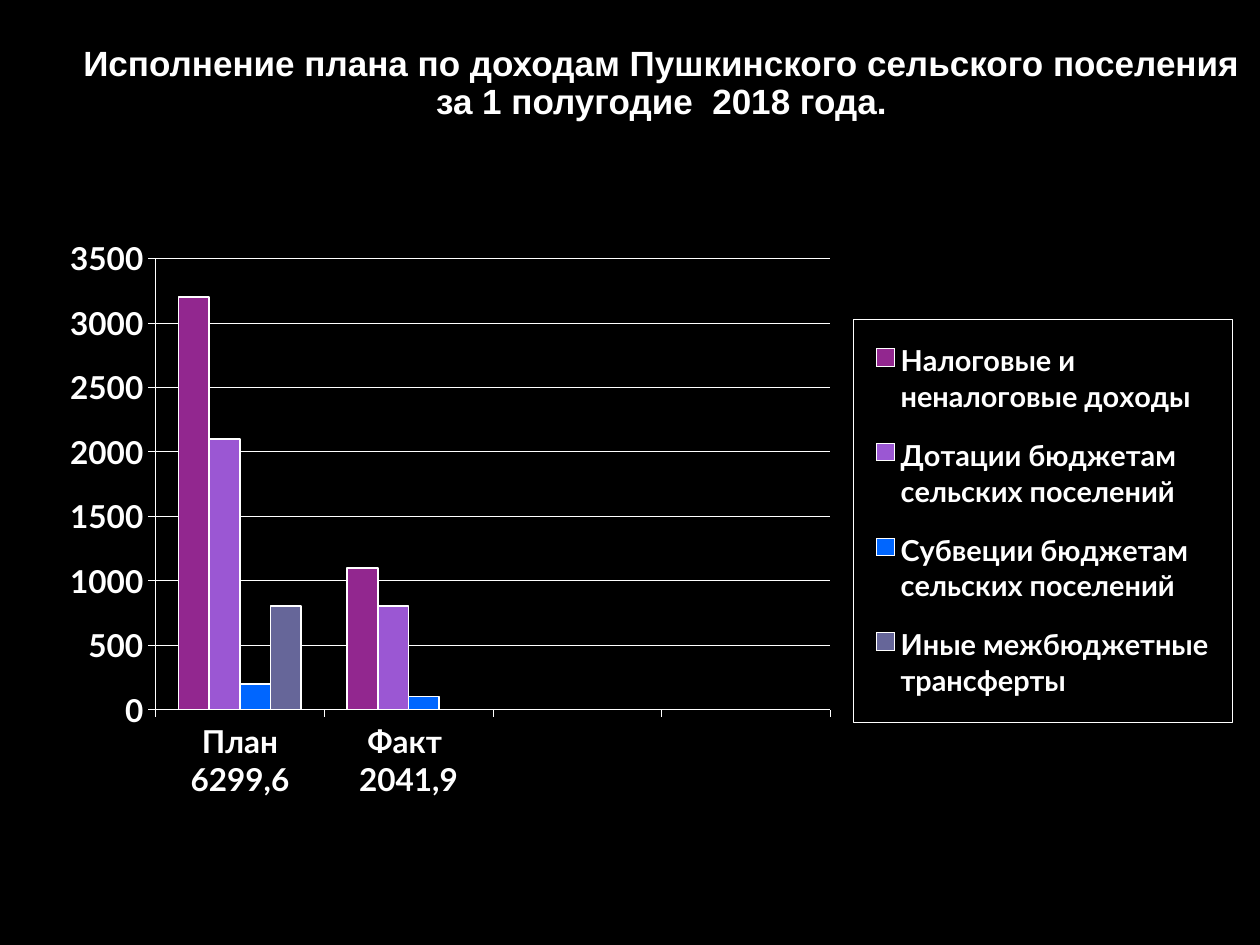
"""Build a slide that charts planned and actual income of a rural settlement."""
from lxml import etree
from pptx import Presentation, util as u
from pptx.chart.data import CategoryChartData
from pptx.dml.color import RGBColor
from pptx.enum import chart as ch, text as tx
from pptx.oxml import parse_xml
from pptx.oxml.ns import nsdecls, qn

WHITE = RGBColor(255, 255, 255)
BLACK = RGBColor(0, 0, 0)
PLUM = RGBColor(0x92, 0x27, 0x8F)
VIOLET = RGBColor(0x9B, 0x57, 0xD3)
BLUE = RGBColor(0x00, 0x66, 0xFF)
SLATE = RGBColor(0x66, 0x66, 0x99)

TITLE = "Исполнение плана по доходам Пушкинского сельского поселения за 1 полугодие  2018 года."
CATS = ["План 6299,6", "Факт  2041,9", "", ""]
ROWS = [
    ("Налоговые и неналоговые доходы", (3200, 1100, 0, 0), PLUM),
    ("Дотации бюджетам  сельских поселений", (2100, 800, None, None), VIOLET),
    ("Субвеции бюджетам сельских поселений", (200, 100, None, None), BLUE),
    ("Иные межбюджетные трансферты", (800, 0, None, None), SLATE),
]
TITLE_BOX = (0.5, 0.21, 9.5, 0.92)
CHART_BOX = (0.39, 1.76, 9.39, 4.84)
PLOT = (0.09, 0.06, 0.57, 0.74)
KEY = (0.68, 0.16, 0.32, 0.66)


def style(font, size, name="Lato"):
    font.size, font.name, font.bold = u.Pt(size), name, True
    font.color.rgb = WHITE


def write(slide, words, box, size=20, name="Arial"):
    frame = slide.shapes.add_textbox(*map(u.Inches, box)).text_frame
    frame.word_wrap = True
    frame.vertical_anchor = tx.MSO_ANCHOR.MIDDLE
    para = frame.paragraphs[0]
    para.alignment, para.line_spacing = tx.PP_ALIGN.CENTER, 0.9
    run = para.add_run()
    run.text = words
    style(run.font, size, name)


def rule(line, width=0.25):
    line.color.rgb, line.width = WHITE, u.Pt(width)


def layout(box, inner=False):
    node = etree.Element(qn("c:layout"))
    hand = etree.SubElement(node, qn("c:manualLayout"))
    pairs = [("layoutTarget", "inner")] if inner else []
    pairs += [("xMode", "edge"), ("yMode", "edge"), *zip("xywh", map(str, box))]
    for tag, val in pairs:
        etree.SubElement(hand, qn("c:" + tag)).set("val", val)
    return node


def place_plot(chart):
    area = chart.element.find(".//" + qn("c:plotArea"))
    for old in area.findall(qn("c:layout")):
        area.remove(old)
    area.insert(0, layout(PLOT, inner=True))


def add_key(chart):
    chart.has_legend = True
    key = chart.legend
    key.position = ch.XL_LEGEND_POSITION.RIGHT
    key.include_in_layout = False
    style(key.font, 16.5)
    node = chart.element.find(".//" + qn("c:legend"))
    for old in node.findall(qn("c:layout")):
        node.remove(old)
    node.find(qn("c:legendPos")).addnext(layout(KEY))
    node.find(qn("c:overlay")).addnext(parse_xml(
        f'<c:spPr {nsdecls("c", "a")}><a:noFill/><a:ln w="3175"><a:solidFill>'
        f'<a:srgbClr val="{WHITE}"/></a:solidFill></a:ln></c:spPr>'))


def add_bars(slide):
    data = CategoryChartData()
    data.categories = CATS
    for name, vals, _ in ROWS:
        data.add_series(name, vals)
    chart = slide.shapes.add_chart(
        ch.XL_CHART_TYPE.COLUMN_CLUSTERED, *map(u.Inches, CHART_BOX), data).chart
    chart.has_title = False
    style(chart.font, 18)
    plot = chart.plots[0]
    plot.gap_width, plot.overlap, plot.vary_by_categories = 150, 0, False
    for bars, (_, _, color) in zip(plot.series, ROWS):
        bars.format.fill.solid()
        bars.format.fill.fore_color.rgb = color
        bars.invert_if_negative = False
        rule(bars.format.line, 1)
    for axis in (chart.category_axis, chart.value_axis):
        axis.major_tick_mark = ch.XL_TICK_MARK.OUTSIDE
        style(axis.tick_labels.font, 18)
        rule(axis.format.line)
    chart.category_axis.tick_label_position = ch.XL_TICK_LABEL_POSITION.LOW
    scale = chart.value_axis
    scale.minimum_scale, scale.maximum_scale, scale.major_unit = 0, 3500, 500
    rule(scale.major_gridlines.format.line)
    place_plot(chart)
    add_key(chart)


def main():
    deck = Presentation()
    deck.slide_width, deck.slide_height = u.Inches(10), u.Inches(7.5)
    slide = deck.slides.add_slide(deck.slide_layouts[6])
    slide.background.fill.solid()
    slide.background.fill.fore_color.rgb = BLACK
    write(slide, TITLE, TITLE_BOX)
    add_bars(slide)
    deck.save("out.pptx")


if __name__ == "__main__":
    main()
